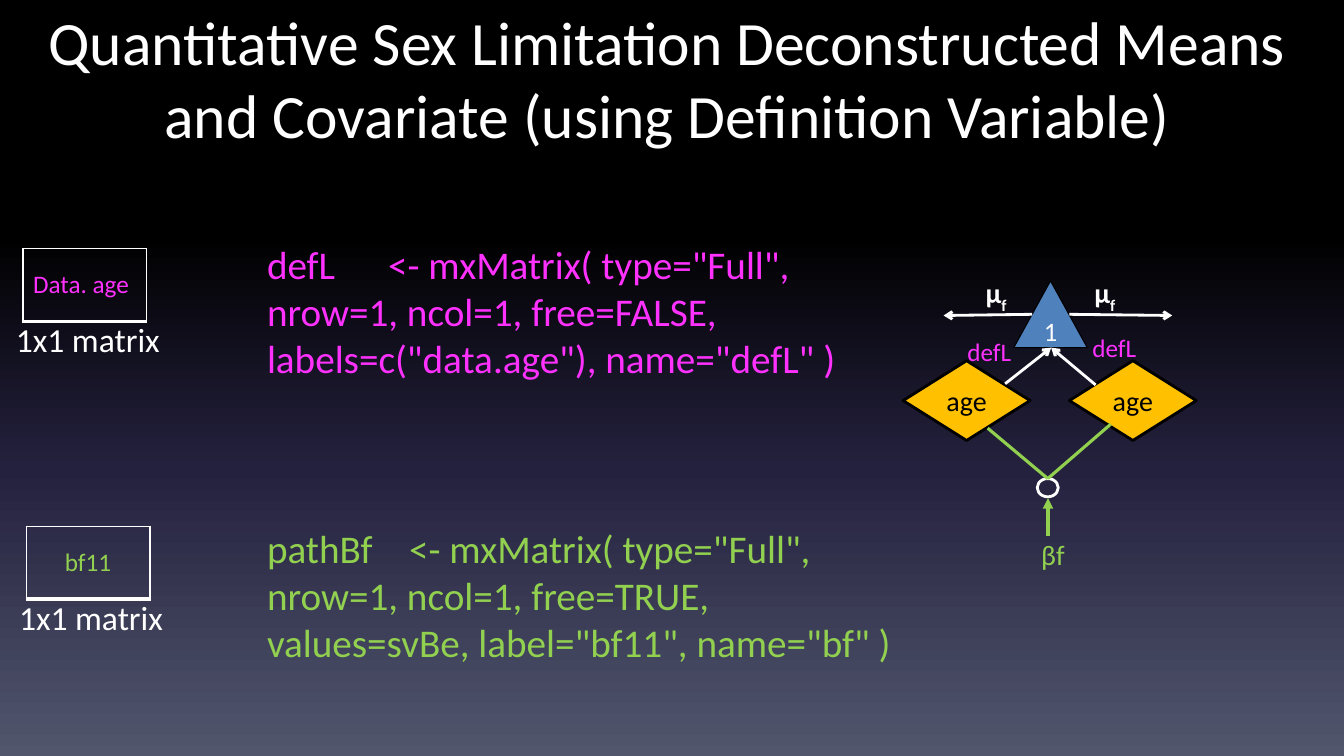
from lxml import etree
from pptx import Presentation
from pptx.dml.color import RGBColor
from pptx.enum.shapes import MSO_CONNECTOR as CXN, MSO_SHAPE as SHP
from pptx.enum.text import MSO_ANCHOR as ANC, PP_ALIGN as AL
from pptx.oxml.ns import qn
from pptx.util import Cm, Pt

WHITE = RGBColor(0xFF, 0xFF, 0xFF)
BLACK = RGBColor(0, 0, 0)
PINK = RGBColor(0xFF, 0x31, 0xFF)
GREEN = RGBColor(0x92, 0xD0, 0x50)
BLUE = RGBColor(0x4F, 0x81, 0xBD)
AMBER = RGBColor(0xFF, 0xC0, 0x00)
NIGHT = RGBColor(0x24, 0x21, 0x3E)
SLATE = RGBColor(0x51, 0x56, 0x6D)


def add_solid(parent, color):
    fill = etree.SubElement(parent, qn("a:solidFill"))
    etree.SubElement(fill, qn("a:srgbClr"), val=str(color))


def set_background(slide, stops):
    """Fill the slide from top to bottom with (percent, colour) stops."""
    fill = slide.background.fill
    fill.gradient()
    fill.gradient_angle = 270
    gs_lst = slide._element.find(".//" + qn("a:gsLst"))
    for gs in list(gs_lst):
        gs_lst.remove(gs)
    for pos, color in stops:
        gs = etree.SubElement(gs_lst, qn("a:gs"), pos=str(pos * 1000))
        etree.SubElement(gs, qn("a:srgbClr"), val=str(color))


def add_run(p, text, size, color, **fmt):
    r = p.add_run()
    r.text = text
    r.font.color.rgb = color
    for name, value in {"name": "Calibri", "size": Pt(size), **fmt}.items():
        setattr(r.font, name, value)
    return r


def add_text(shapes, box, text, size, color, wrap=False, **fmt):
    tf = shapes.add_textbox(*map(Cm, box)).text_frame
    tf.word_wrap = wrap
    add_run(tf.paragraphs[0], text, size, color, **fmt)
    return tf


def add_node(shapes, kind, box, fill, line, width, text="", size=20, color=BLACK):
    sp = shapes.add_shape(kind, *map(Cm, box))
    sp.shadow.inherit = False
    if fill is None:
        sp.fill.background()
    else:
        sp.fill.solid()
        sp.fill.fore_color.rgb = fill
    sp.line.color.rgb = line
    sp.line.width = Pt(width)
    if text:
        tf = sp.text_frame
        fmt = {"word_wrap": False, "vertical_anchor": ANC.MIDDLE,
               "margin_left": 0, "margin_right": 0}
        for name, value in fmt.items():
            setattr(tf, name, value)
        tf.paragraphs[0].alignment = AL.CENTER
        add_run(tf.paragraphs[0], text, size, color)
    return sp


def add_line(shapes, start, end, color, width, head=None):
    """Draw a straight line, with an arrowhead of type head at its end."""
    cxn = shapes.add_connector(CXN.STRAIGHT, *map(Cm, (*start, *end)))
    cxn.line.color.rgb = color
    cxn.line.width = Pt(width)
    if head:
        etree.SubElement(cxn.line._get_or_add_ln(), qn("a:tailEnd"), type=head)
    etree.SubElement(cxn._element.spPr, qn("a:effectLst"))
    return cxn


def add_title(slide, box, text):
    title = slide.shapes.title
    for name, value in zip(("left", "top", "width", "height"), box):
        setattr(title, name, Cm(value))
    tf = title.text_frame
    tf.word_wrap = True
    tf.vertical_anchor = ANC.MIDDLE
    tf.paragraphs[0].alignment = AL.CENTER
    add_run(tf.paragraphs[0], text, 44, WHITE)


def add_code(slide, box, statements, gap):
    """Write (name, tab stop, call, colour) statements, gap points apart."""
    tf = slide.shapes.add_textbox(*map(Cm, box)).text_frame
    tf.word_wrap = True
    for i, (name, stop, call, color) in enumerate(statements):
        p = tf.add_paragraph() if i else tf.paragraphs[0]
        if i:
            p.space_before = Pt(gap)
        add_run(p, f"{name}\t<- {call}", 28, color)
        tabs = etree.SubElement(p._p.get_or_add_pPr(), qn("a:tabLst"))
        etree.SubElement(tabs, qn("a:tab"), pos=str(Cm(stop)), algn="l")


def add_matrix(slide, box, label, color, align):
    x, y, w, h = box
    table = slide.shapes.add_table(1, 1, *map(Cm, box)).table
    table.first_row = table.horz_banding = False
    cell = table.cell(0, 0)
    cell.vertical_anchor = ANC.MIDDLE
    p = cell.text_frame.paragraphs[0]
    p.alignment = align
    add_run(p, label, 18, color)
    tc_pr = cell._tc.get_or_add_tcPr()
    for side, width in {"L": 1, "R": 1, "T": 1, "B": 3}.items():
        add_solid(etree.SubElement(tc_pr, qn("a:ln" + side), w=str(Pt(width))), WHITE)
    cell.fill.background()
    add_text(slide.shapes, (x - 0.43, y + 1.65, 4.14, 1.27), "1x1 matrix", 24, WHITE)


def add_path_diagram(slide, x, y):
    shapes = slide.shapes.add_group_shape().shapes

    def at(dx, dy, *size):
        return (x + dx, y + dy, *size)

    add_node(shapes, SHP.ISOSCELES_TRIANGLE, at(2.79, 0.25, 1.85, 1.68),
             BLUE, BLACK, 0.75, "1", 19, WHITE)
    for start, end, label in ((3.25, 1.02, 1.83), (4.19, 6.78, 4.57)):
        add_line(shapes, at(start, 1.09), at(end, 1.12), WHITE, 2, "arrow")
        tf = add_text(shapes, at(label, 0, 1.07, 1.12), "μ", 20, WHITE, bold=True)
        sub = add_run(tf.paragraphs[0], "f", 20, WHITE, bold=True)
        sub.font._element.set("baseline", "-25000")

    for left in (0, 4.19):
        add_node(shapes, SHP.DIAMOND, at(left, 2.26, 3.2, 2.01), AMBER, BLACK, 2, "age")
    circle = add_node(shapes, SHP.OVAL, at(3.38, 5.23, 0.53, 0.46), None, WHITE, 2)
    add_text(shapes, at(3.23, 6.58, 2.01, 1.12), "βf", 20, GREEN, wrap=True)
    add_line(shapes, at(3.65, 6.68), at(3.65, 5.72), GREEN, 2.5, "triangle")

    for start in ((2.13, 3.96), (5.23, 3.86)):
        link = add_line(shapes, at(*start), at(3.65, 5.23), GREEN, 2.25)
        link.end_connect(circle, 0)
    for start in ((2.57, 2.84), (4.85, 2.87)):
        add_line(shapes, at(*start), at(3.73, 1.93), WHITE, 2, "arrow")
    for label in ((1.37, 1.52), (4.52, 1.42)):
        add_text(shapes, at(*label, 1.73, 1.02), "defL", 18, PINK)


def main():
    prs = Presentation()
    prs.slide_width, prs.slide_height = Cm(33.87), Cm(19.05)
    s = prs.slides.add_slide(prs.slide_layouts[5])
    set_background(s, ((0, BLACK), (31, BLACK), (62, NIGHT), (100, SLATE)))
    add_title(s, (0.91, 0.36, 31.83, 3.18),
              "Quantitative Sex Limitation Deconstructed Means "
              "and Covariate (using Definition Variable)")
    add_code(s, (6.48, 5.92, 16.71, 11.02), (
        ("defL", 3.05, 'mxMatrix( type="Full", nrow=1, ncol=1, free=FALSE, '
         'labels=c("data.age"), name="defL" )', PINK),
        ("pathBf", 3.58, 'mxMatrix( type="Full", nrow=1, ncol=1, free=TRUE, '
         'values=svBe, label="bf11", name="bf" )', GREEN)), 102)
    add_path_diagram(s, 22.76, 6.83)
    add_matrix(s, (0.58, 6.27, 3.12, 1.83), "Data. age", PINK, AL.LEFT)
    add_matrix(s, (0.66, 13.26, 3.12, 1.83), "bf11", GREEN, AL.CENTER)
    prs.save("out.pptx")


if __name__ == "__main__":
    main()
